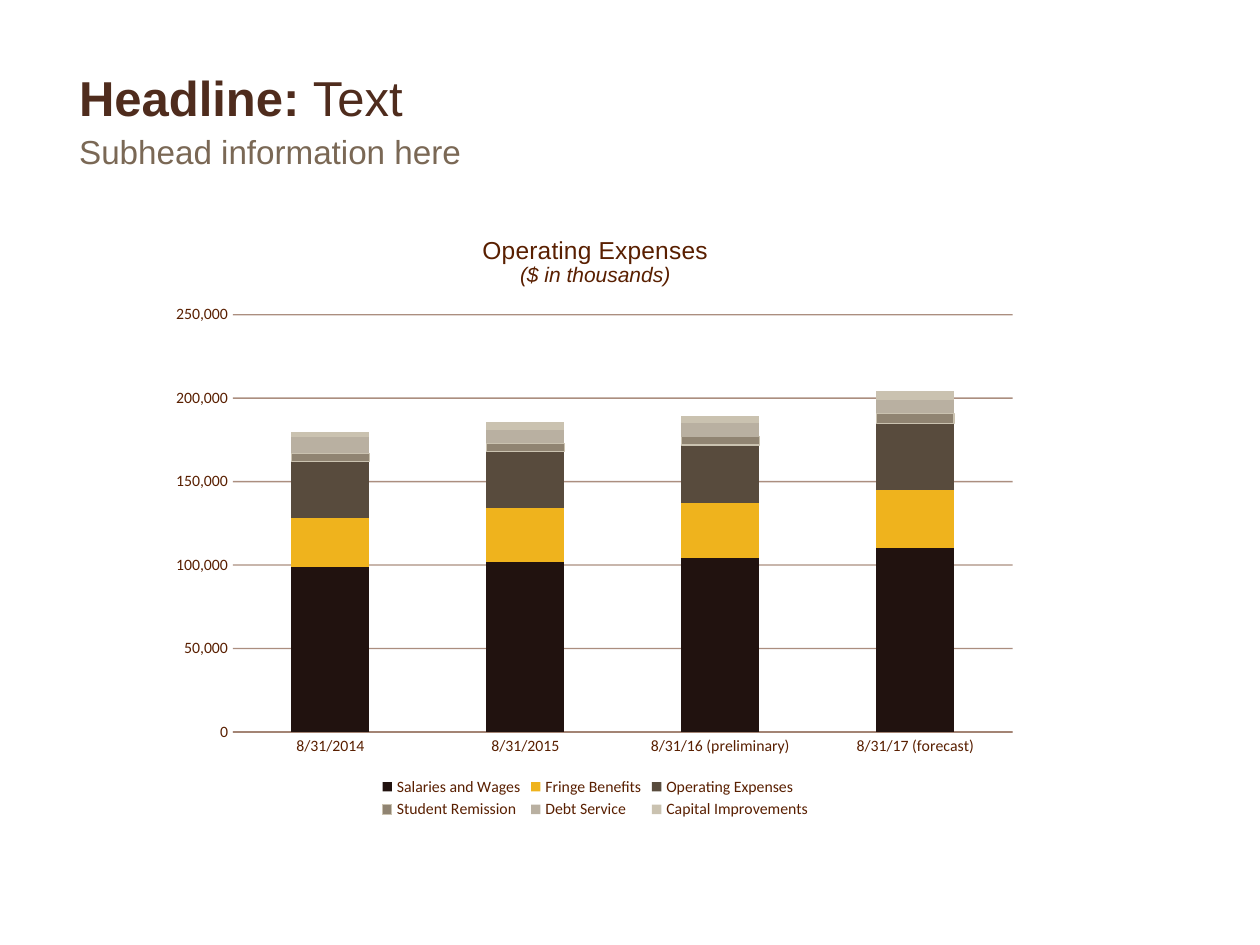
from lxml import etree
from pptx import Presentation
from pptx import util as u
from pptx.chart.data import CategoryChartData
from pptx.dml.color import RGBColor
from pptx.enum import chart as ch, text
from pptx.oxml import parse_xml
from pptx.oxml.ns import nsdecls, qn

COLORS = {
    "headline": "4F2C1D", "subhead": "7A6855", "label": "591F00",
    "salaries": "21120F", "fringe": "EFB31D", "operating": "584B3D",
    "remission": "908472", "debt": "B9B0A1", "capital": "CAC2B0",
}
CATEGORIES = ["8/31/2014", "8/31/2015", "8/31/16 (preliminary)", "8/31/17 (forecast)"]
SERIES = [
    ("Salaries and Wages", "salaries", (99000, 102000, 104000, 110000)),
    ("Fringe Benefits", "fringe", (29000, 32000, 33000, 35000)),
    ("Operating Expenses", "operating", (34000, 34000, 35000, 40000)),
    ("Student Remission", "remission", (5000, 5000, 5000, 6000)),
    ("Debt Service", "debt", (10000, 8000, 8000, 8000)),
    ("Capital Improvements", "capital", (3000, 5000, 4000, 5000)),
]


class Deck:
    """Holds the style and the current slide, and adds each kind of element."""

    def __init__(self, prs):
        self.s = prs.slides.add_slide(prs.slide_layouts[6])

    def color(self, name):
        return RGBColor.from_string(COLORS[name])

    def font(self, font, size, color, name="Arial", bold=False, italic=False):
        font.name, font.size = name, u.Pt(size)
        font.bold, font.italic = bold, italic
        font.color.rgb = self.color(color)

    def text(self, box, runs, size, color, anchor):
        sp = self.s.shapes.add_textbox(*map(u.Inches, box))
        tf = sp.text_frame
        tf.word_wrap, tf.vertical_anchor = True, anchor
        for words, bold in runs:
            r = tf.paragraphs[0].add_run()
            r.text = words
            self.font(r.font, size, color, bold=bold)

    def line(self, line):
        line.width = u.Pt(0.75)
        line.color.rgb = self.color("label")
        rgb = line.fill._xPr.find(f".//{qn('a:srgbClr')}")
        etree.SubElement(rgb, qn("a:alpha")).set("val", "50000")

    def layout(self, parent, index, box, inner=False):
        for old in parent.findall(qn("c:layout")):
            parent.remove(old)
        target = '<c:layoutTarget val="inner"/>' if inner else ""
        modes = '<c:xMode val="edge"/><c:yMode val="edge"/>'
        sizes = "".join(f'<c:{k} val="{v}"/>' for k, v in zip("xywh", box))
        parent.insert(index, parse_xml(
            f'<c:layout {nsdecls("c")}><c:manualLayout>{target}{modes}{sizes}'
            "</c:manualLayout></c:layout>"))

    def chart_title(self, chart, lines):
        tf = chart.chart_title.text_frame
        tf.text = "\n".join(words for words, _, _ in lines)
        for p, (_, size, italic) in zip(tf.paragraphs, lines):
            self.font(p.runs[0].font, size, "label", italic=italic)

    def axis(self, axis):
        axis.major_tick_mark = axis.minor_tick_mark = ch.XL_TICK_MARK.NONE
        self.font(axis.tick_labels.font, 9, "label", "Calibri")

    def stacked_chart(self, box, title):
        data = CategoryChartData(number_format="#,##0")
        data.categories = CATEGORIES
        for name, _, values in SERIES:
            data.add_series(name, values)
        chart = self.s.shapes.add_chart(
            ch.XL_CHART_TYPE.COLUMN_STACKED, *map(u.Inches, box), data).chart
        chart.font.name, chart.font.size = "Calibri", u.Pt(10)
        self.chart_title(chart, title)

        plot = chart.plots[0]
        plot.gap_width, plot.overlap, plot.vary_by_categories = 150, 100, False
        for ser, (name, color, _) in zip(plot.series, SERIES):
            ser.format.fill.solid()
            ser.format.fill.fore_color.rgb = self.color(color)
            if name == "Student Remission":
                ser.format.line.width = u.Pt(0.75)
                ser.format.line.color.rgb = self.color("capital")

        cat, val = chart.category_axis, chart.value_axis
        self.axis(cat)
        self.line(cat.format.line)
        self.axis(val)
        val.format.line.fill.background()
        val.minimum_scale, val.maximum_scale, val.major_unit = 0, 250000, 50000
        val.tick_labels.number_format = "#,##0"
        val.tick_labels.number_format_is_linked = False
        self.line(val.major_gridlines.format.line)

        chart.has_legend = True
        legend = chart.legend
        legend.position = ch.XL_LEGEND_POSITION.BOTTOM
        legend.include_in_layout = False
        self.font(legend.font, 9, "label", "Calibri")
        self.layout(legend._element, 1, (0.25, 0.91, 0.5, 0.08))
        plot_area = chart._chartSpace.find(f".//{qn('c:plotArea')}")
        self.layout(plot_area, 0, (0.085, 0.167, 0.893, 0.676), inner=True)


def main():
    prs = Presentation()
    prs.slide_width, prs.slide_height = u.Inches(10), u.Inches(7.5)
    deck = Deck(prs)
    deck.stacked_chart((1.26, 1.68, 6.93, 4.9), [
        ("Operating Expenses", 14, False), ("($ in thousands)", 12, True)])
    deck.text((0.53, 0.14, 8.47, 1.25), [("Headline: ", True), ("Text", False)],
              28, "headline", text.MSO_ANCHOR.MIDDLE)
    deck.text((0.53, 0.99, 3.52, 0.42), [("Subhead information here", False)],
              19, "subhead", text.MSO_ANCHOR.TOP)
    prs.save("out.pptx")


if __name__ == "__main__":
    main()
